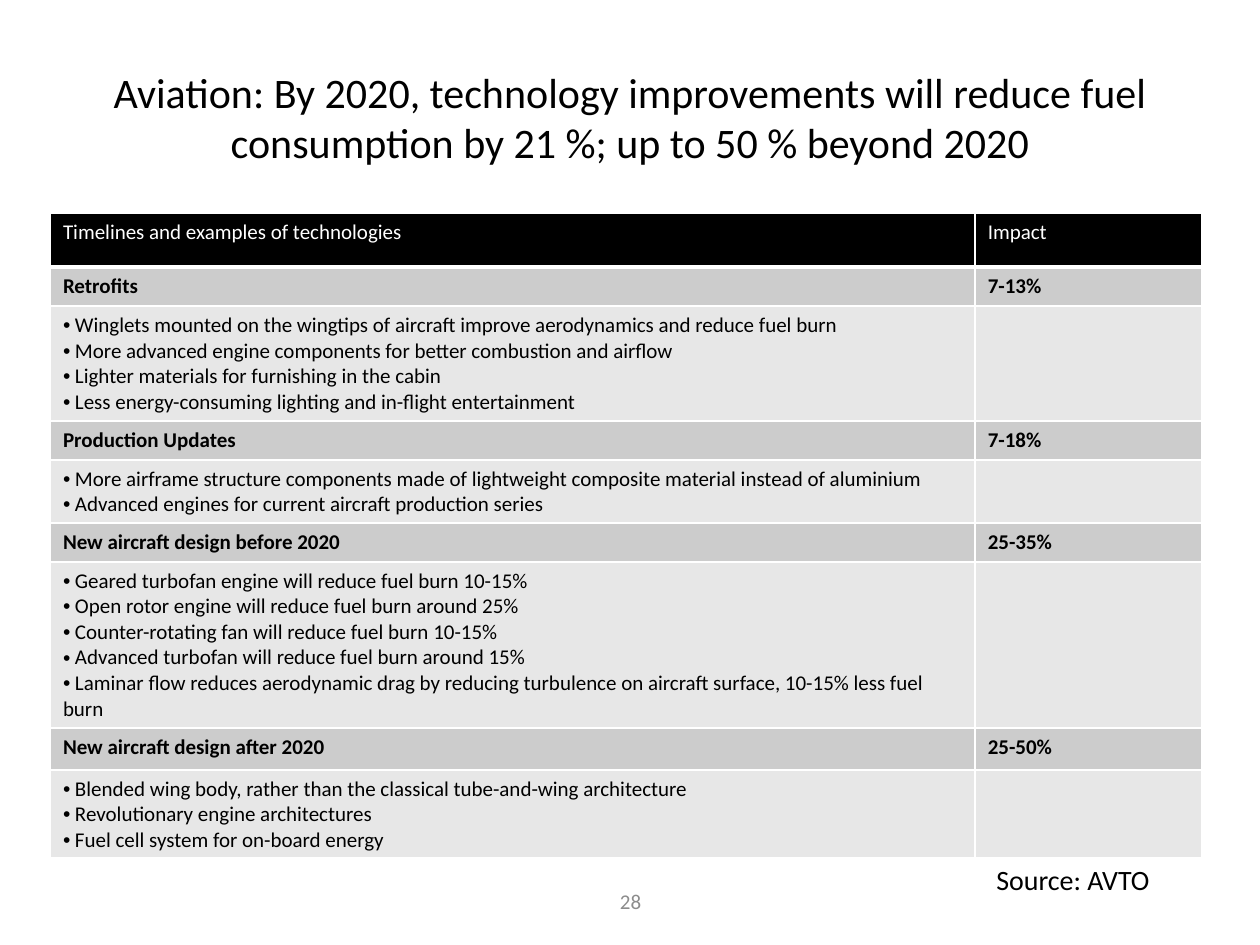
"""Build the slide on aviation fuel savings by technology timeline."""
from lxml.etree import SubElement as Sub
from pptx import Presentation
from pptx.dml.color import RGBColor as Rgb
from pptx.enum.text import MSO_ANCHOR as Anchor, PP_ALIGN as Align
from pptx.oxml.ns import qn
from pptx.util import Inches, Pt

TITLE = ("Aviation: By 2020, technology improvements will reduce fuel "
         "consumption by 21 %; up to 50 % beyond 2020")
HEAD = ("Timelines and examples of technologies", "Impact")
STAGES = [
    ("Retrofits", "7-13%", [
        "Winglets mounted on the wingtips of aircraft improve aerodynamics and reduce fuel burn",
        "More advanced engine components for better combustion and airflow",
        "Lighter materials for furnishing in the cabin",
        "Less energy-consuming lighting and in-flight entertainment"]),
    ("Production Updates", "7-18%", [
        "More airframe structure components made of lightweight composite material instead of aluminium",
        "Advanced engines for current aircraft production series"]),
    ("New aircraft design before 2020", "25-35%", [
        "Geared turbofan engine will reduce fuel burn 10-15%",
        "Open rotor engine will reduce fuel burn around 25%",
        "Counter-rotating fan will reduce fuel burn 10-15%",
        "Advanced turbofan will reduce fuel burn around 15%",
        "Laminar flow reduces aerodynamic drag by reducing turbulence on aircraft surface, "
        "10-15% less fuel burn"]),
    ("New aircraft design after 2020", "25-50%", [
        "Blended wing body, rather than the classical tube-and-wing architecture",
        "Revolutionary engine architectures",
        "Fuel cell system for on-board energy"]),
]
COLS = (7.34, 1.8)
ROWS = (0.43, 0.31, 0.91, 0.31, 0.5, 0.31, 1.32, 0.33, 0.7)
COLORS = {"black": "000000", "white": "FFFFFF", "stage": "CCCCCC",
          "list": "E7E7E7", "page": "8C8C8C"}
FONT = "Calibri"


def add_run(para, text, size=12, color="black", bold=False):
    run = para.add_run()
    run.text = text
    font = run.font
    font.name, font.size, font.bold = FONT, Pt(size), bold
    font.color.rgb = Rgb.from_string(COLORS[color])


def add_text(slide, box, text, size, color="black", align=Align.CENTER,
             anchor=Anchor.MIDDLE, wrap=True):
    frame = slide.shapes.add_textbox(*map(Inches, box)).text_frame
    frame.word_wrap, frame.vertical_anchor = wrap, anchor
    para = frame.paragraphs[0]
    para.alignment = align
    add_run(para, text, size, color)


def set_edges(cell, top, base):
    props = cell._tc.get_or_add_tcPr()
    for tag, width in (("lnL", 1), ("lnR", 1), ("lnT", top), ("lnB", base)):
        line = Sub(props, qn(f"a:{tag}"), w=str(Pt(width)))
        Sub(Sub(line, qn("a:solidFill")), qn("a:srgbClr"), val=COLORS["white"])


def add_bullet(para):
    props = para._p.get_or_add_pPr()
    props.set("marL", "0")
    props.set("indent", "0")
    Sub(props, qn("a:buFont"), typeface="Arial")
    Sub(props, qn("a:buChar"), char="•")


def fill_cell(cell, lines, fill, color="black", bold=False, bullet=False):
    cell.fill.solid()
    cell.fill.fore_color.rgb = Rgb.from_string(COLORS[fill])
    frame = cell.text_frame
    for num, line in enumerate(lines):
        para = frame.add_paragraph() if num else frame.paragraphs[0]
        if bullet:
            add_bullet(para)
        add_run(para, f" {line}" if bullet else line, 12, color, bold)


def add_grid(slide):
    box = map(Inches, (0.4, 1.69, sum(COLS), sum(ROWS)))
    table = slide.shapes.add_table(len(ROWS), len(COLS), *box).table
    for col, width in zip(table.columns, COLS):
        col.width = Inches(width)
    for num, (row, height) in enumerate(zip(table.rows, ROWS)):
        row.height = Inches(height)
        for cell in row.cells:
            set_edges(cell, 3 if num == 1 else 1, 3 if num == 0 else 1)
    for col, text in enumerate(HEAD):
        fill_cell(table.cell(0, col), [text], "black", "white")
    for num, (name, impact, items) in enumerate(STAGES):
        top = 1 + 2 * num
        for col, text in enumerate((name, impact)):
            fill_cell(table.cell(top, col), [text], "stage", bold=True)
        fill_cell(table.cell(top + 1, 0), items, "list", bullet=True)
        fill_cell(table.cell(top + 1, 1), [], "list")


def main():
    deck = Presentation()
    deck.slide_width, deck.slide_height = Inches(10), Inches(7.5)
    slide = deck.slides.add_slide(deck.slide_layouts[6])
    add_text(slide, (3.42, 6.95, 3.17, 0.4), "28", 12, "page")
    add_grid(slide)
    add_text(slide, (0.5, 0.3, 9, 1.25), TITLE, 24)
    add_text(slide, (7.81, 6.8, 1.5, 0.37), "Source: AVTO", 16,
             align=Align.LEFT, anchor=Anchor.TOP, wrap=False)
    deck.save("out.pptx")


if __name__ == "__main__":
    main()
